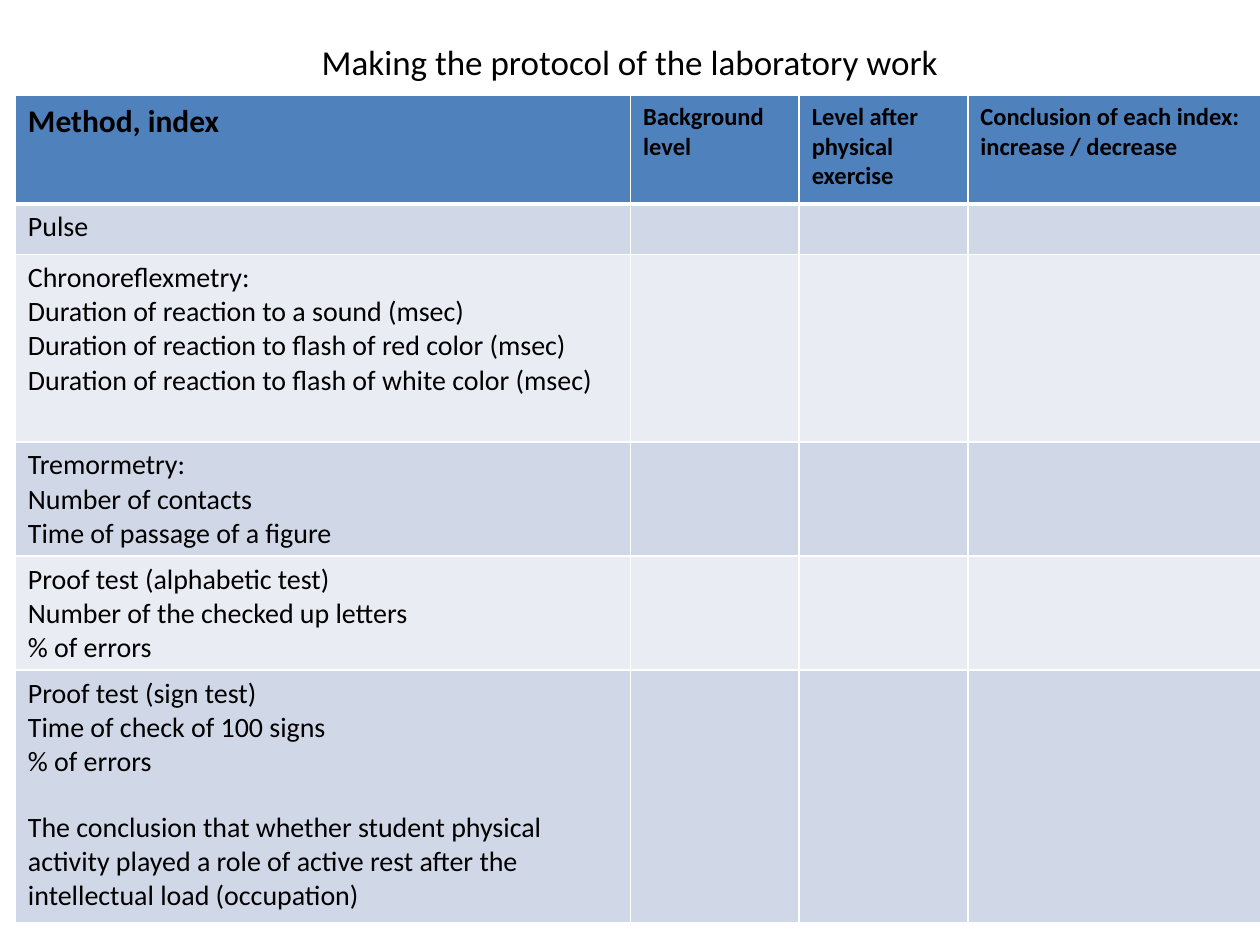
from lxml import etree
from pptx import Presentation
from pptx.dml.color import RGBColor
from pptx.enum import text
from pptx.oxml.ns import qn
from pptx.util import Cm, Pt

FONT = "Calibri"
HUES = {"ink": "000000", "head": "4F81BD", "odd": "D0D8E7",
        "even": "E9ECF3", "rule": "FFFFFF"}

TITLE = "Making the protocol of the laboratory work"
HEADS = ["Method, index", "Background level", "Level after physical exercise",
         "Conclusion of each index: increase / decrease"]
TESTS = [
    ["Pulse"],
    ["Chronoreflexmetry:",
     "Duration of reaction to a sound (msec)",
     "Duration of reaction to flash of red color (msec)",
     "Duration of reaction to flash of white color (msec)"],
    ["Tremormetry:", "Number of contacts", "Time of passage of a figure"],
    ["Proof test (alphabetic test)", "Number of the checked up letters",
     "% of errors"],
    ["Proof test (sign test)", "Time of check of 100 signs", "% of errors",
     "The conclusion that whether student physical activity played a role "
     "of active rest after the intellectual load (occupation)"],
]
WIDTHS = [12.4, 3.4, 3.4, 5.9]
HEIGHTS = [2.18, 1.02, 3.78, 2.3, 2.3, 5.1]
THIN, THICK = 0.96, 3


def style(para, size, bold=False):
    font = para.font
    font.name, font.size, font.bold = FONT, Pt(size), bold
    font.color.rgb = RGBColor.from_string(HUES["ink"])


def edge(cell, side, width):
    line = etree.SubElement(cell._tc.get_or_add_tcPr(), qn("a:ln" + side),
                            w=str(Pt(width)))
    fill = etree.SubElement(line, qn("a:solidFill"))
    etree.SubElement(fill, qn("a:srgbClr"), val=HUES["rule"])


def paint(cell, row):
    """Draw the rules, then the fill, as the schema orders them."""
    edge(cell, "L", THIN)
    edge(cell, "R", THIN)
    edge(cell, "T", THICK if row == 1 else THIN)
    edge(cell, "B", THICK if row == 0 else THIN)
    hue = "head" if row == 0 else "odd" if row % 2 else "even"
    cell.fill.solid()
    cell.fill.fore_color.rgb = RGBColor.from_string(HUES[hue])


def add_title(slide):
    frame = slide.shapes.add_textbox(Cm(1.27), Cm(0.76), Cm(22.86),
                                     Cm(0.97)).text_frame
    frame.word_wrap = True
    frame.vertical_anchor = text.MSO_ANCHOR.MIDDLE
    frame.text = TITLE
    para = frame.paragraphs[0]
    para.alignment = text.PP_ALIGN.CENTER
    style(para, 20)


def add_grid(slide):
    grid = slide.shapes.add_table(
        len(HEIGHTS), len(WIDTHS), Cm(0.31), Cm(1.93),
        Cm(sum(WIDTHS)), Cm(sum(HEIGHTS))).table
    for col, width in zip(grid.columns, WIDTHS):
        col.width = Cm(width)
    for row, height in zip(grid.rows, HEIGHTS):
        row.height = Cm(height)
    for num, row in enumerate(grid.rows):
        for cell in row.cells:
            paint(cell, num)

    for col, head in enumerate(HEADS):
        cell = grid.cell(0, col)
        cell.text = head
        style(cell.text_frame.paragraphs[0], 14 if col else 18, True)
    for num, lines in enumerate(TESTS, 1):
        cell = grid.cell(num, 0)
        cell.text = "\n".join(lines)
        for para in cell.text_frame.paragraphs:
            style(para, 16)
    # the closing remark stands apart from the last test
    para.space_before = Pt(18)


def main():
    deck = Presentation()
    deck.slide_width, deck.slide_height = Cm(25.4), Cm(19.05)
    slide = deck.slides.add_slide(deck.slide_layouts[6])
    add_title(slide)
    add_grid(slide)
    deck.save("out.pptx")


if __name__ == "__main__":
    main()
